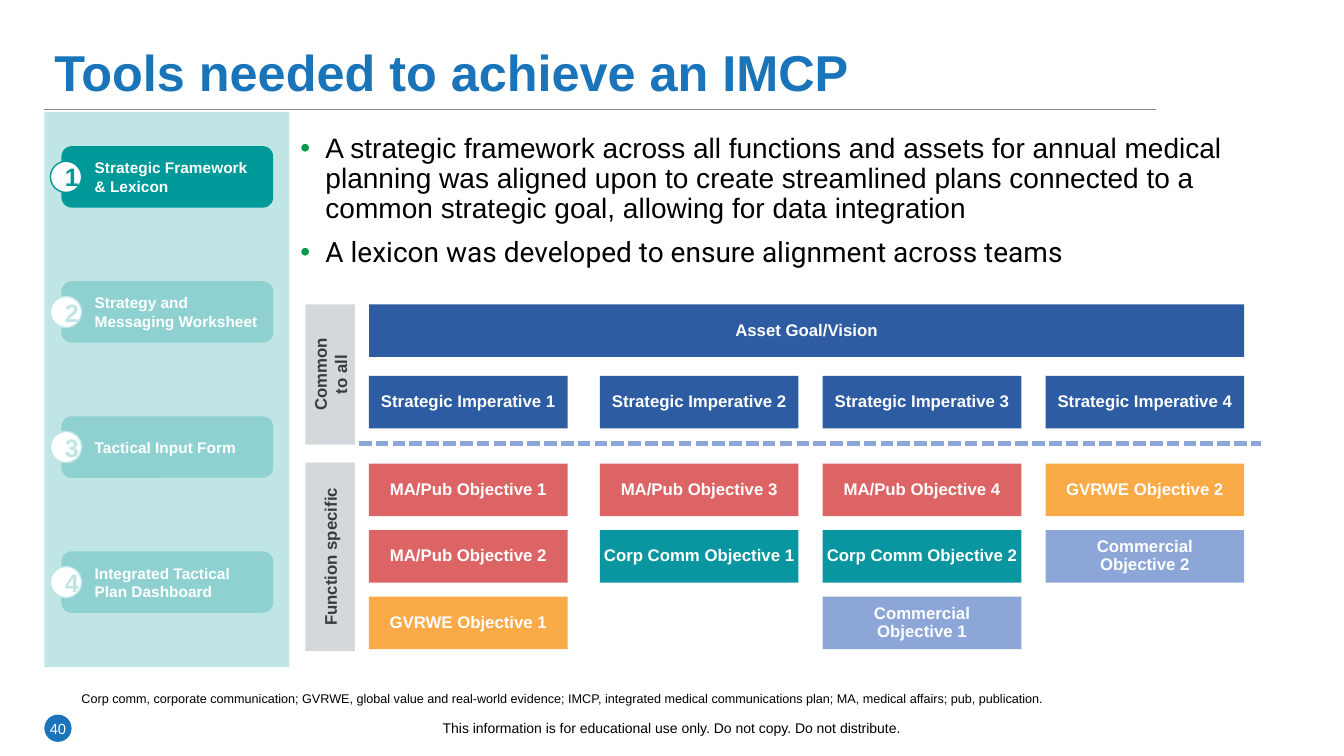
"""Build the slide on the tools needed to achieve an IMCP."""
from copy import deepcopy
from dataclasses import dataclass

from lxml import etree
from pptx import Presentation
from pptx.dml.color import RGBColor
from pptx.enum.dml import MSO_LINE
from pptx.enum.shapes import MSO_CONNECTOR, MSO_SHAPE
from pptx.enum.text import MSO_ANCHOR, PP_ALIGN
from pptx.oxml.ns import qn
from pptx.util import Inches, Pt

RECT, ROUND, OVAL = MSO_SHAPE.RECTANGLE, MSO_SHAPE.ROUNDED_RECTANGLE, MSO_SHAPE.OVAL
LEFT, CENTER = PP_ALIGN.LEFT, PP_ALIGN.CENTER
TOP, MIDDLE, BOTTOM = MSO_ANCHOR.TOP, MSO_ANCHOR.MIDDLE, MSO_ANCHOR.BOTTOM
STRAIGHT, DASH = MSO_CONNECTOR.STRAIGHT, MSO_LINE.SQUARE_DOT

TITLE = "Tools needed to achieve an IMCP"
BULLETS = [
    ("A strategic framework across all functions and assets for annual medical planning was "
     "aligned upon to create streamlined plans connected to a common strategic goal, allowing "
     "for data integration", "Arial"),
    ("A lexicon was developed to ensure alignment across teams", "Roboto"),
]
STEPS = ["Strategic Framework\v& Lexicon", "Strategy and Messaging Worksheet",
         "Tactical Input Form", "Integrated Tactical Plan Dashboard"]
ACTIVE_STEP = 1
GOAL = "Asset Goal/Vision"
BOARD = [
    [("Strategic Imperative 1", "common"), ("Strategic Imperative 2", "common"),
     ("Strategic Imperative 3", "common"), ("Strategic Imperative 4", "common")],
    [("MA/Pub Objective 1", "medical"), ("MA/Pub Objective 3", "medical"),
     ("MA/Pub Objective 4", "medical"), ("GVRWE Objective 2", "evidence")],
    [("MA/Pub Objective 2", "medical"), ("Corp Comm Objective 1", "corporate"),
     ("Corp Comm Objective 2", "corporate"), ("Commercial\vObjective 2", "commercial")],
    [("GVRWE Objective 1", "evidence"), None,
     ("Commercial\vObjective 1", "commercial"), None],
]
BANDS = [("Common\vto all", 3.02, 1.39), ("Function specific", 4.59, 1.87)]
ABBREVIATIONS = ("Corp comm, corporate communication; GVRWE, global value and real-world evidence; "
                 "IMCP, integrated medical communications plan; MA, medical affairs; "
                 "pub, publication.")
NOTICE = "This information is for educational use only. Do not copy. Do not distribute."
PAGE = "40"

MARGIN = 0.44
COLUMNS = [3.66, 5.95, 8.16, 10.37]
ROWS = [3.73, 4.6, 5.26, 5.92]
GOAL_TOP, BOX_W, BOX_H = 3.02, 1.97, 0.52
BAND_LEFT, BAND_W = 3.03, 0.49
STEP_TOP, STEP_PITCH, STEP_H, BADGE = 1.45, 1.34, 0.61, 0.31


@dataclass(frozen=True)
class Theme:
    font: str = "Arial"
    blue: str = "1A74BA"
    teal: str = "009999"
    pale: str = "BFE5E5"
    white: str = "FFFFFF"
    black: str = "000000"
    rule: str = "8A8A8A"
    bullet: str = "009A4D"
    band: str = "D5D8DB"
    band_text: str = "373C41"
    common: str = "2D5CA2"
    medical: str = "DC6464"
    corporate: str = "0A96A0"
    evidence: str = "FAAA46"
    commercial: str = "8CA6D7"
    title_pt: float = 36
    body_pt: float = 20
    badge_pt: float = 18
    box_pt: float = 12
    step_pt: float = 11
    page_pt: float = 10.5
    notice_pt: float = 10
    note_pt: float = 9


T = Theme()


def rgb(value):
    return RGBColor.from_string(value)


def write(p, text, size=T.box_pt, color=T.white, font=T.font, bold=False, align=LEFT, spacing=None):
    p.text = text
    p.alignment = align
    p.line_spacing = spacing
    for r in p.runs:
        r.font.name, r.font.size, r.font.bold = font, Pt(size), bold
        r.font.color.rgb = rgb(color)
    for br in p._p.findall(qn("a:br")):
        br.append(deepcopy(p.runs[0]._r.rPr))


def frame(sp, anchor=TOP, insets=(0.1, 0.05, 0.1, 0.05)):
    tf = sp.text_frame
    tf.word_wrap = True
    tf.vertical_anchor = anchor
    tf.margin_left, tf.margin_top, tf.margin_right, tf.margin_bottom = map(Inches, insets)
    return tf


def add_shape(slide, kind, box, fill, line=None, alpha=None):
    sp = slide.shapes.add_shape(kind, *map(Inches, box))
    sp.shadow.inherit = False
    sp.fill.solid()
    sp.fill.fore_color.rgb = rgb(fill)
    if alpha:
        color = sp._element.spPr.find(qn("a:solidFill"))[0]
        etree.SubElement(color, qn("a:alpha"), val=str(alpha * 1000))
    if line:
        sp.line.color.rgb = rgb(line)
        sp.line.width = Pt(1)
    else:
        sp.line.fill.background()
    return sp


def add_text(slide, box, text, anchor=TOP, **fmt):
    sp = slide.shapes.add_textbox(*map(Inches, box))
    write(frame(sp, anchor).paragraphs[0], text, color=T.black, **fmt)


def add_line(slide, left, right, y, color, width, dash=None):
    line = slide.shapes.add_connector(STRAIGHT, *map(Inches, (left, y, right, y)))
    line.line.color.rgb = rgb(color)
    line.line.width = Pt(width)
    if dash:
        line.line.dash_style = dash
    etree.SubElement(line._element.spPr, qn("a:effectLst"))


def add_title(slide):
    sp = slide.shapes.title
    sp.left, sp.top, sp.width, sp.height = map(Inches, (MARGIN, 0.21, 12.17, 1.07))
    write(frame(sp, MIDDLE).paragraphs[0], TITLE, size=T.title_pt, color=T.blue, bold=True,
          spacing=0.9)


def add_bullets(slide):
    sp = slide.shapes.add_textbox(*map(Inches, (2.88, 1.28, 10.17, 1.72)))
    tf = frame(sp)
    for i, (text, font) in enumerate(BULLETS):
        p = tf.add_paragraph() if i else tf.paragraphs[0]
        write(p, text, size=T.body_pt, color=T.black, font=font, spacing=0.9)
        if i:
            p.space_before = Pt(10)
        pPr = p._p.get_or_add_pPr()
        pPr.set("marL", str(Inches(0.25)))
        pPr.set("indent", str(-Inches(0.25)))
        color = etree.SubElement(pPr, qn("a:buClr"))
        etree.SubElement(color, qn("a:srgbClr"), val=T.bullet)
        etree.SubElement(pPr, qn("a:buFont"), typeface="Arial")
        etree.SubElement(pPr, qn("a:buChar"), char="•")


def add_steps(slide):
    add_shape(slide, RECT, (MARGIN, 1.11, 2.43, 5.51), T.teal, alpha=25)
    for i, text in enumerate(STEPS):
        active = i + 1 == ACTIVE_STEP
        top = STEP_TOP + i * STEP_PITCH
        card = add_shape(slide, ROUND, (0.61, top, 2.1, STEP_H), T.teal,
                         alpha=None if active else 25)
        write(frame(card, MIDDLE, (0.3, 0.05, 0.1, 0.05)).paragraphs[0], text,
              size=T.step_pt, bold=True)
        accent = T.teal if active else T.pale
        badge = add_shape(slide, OVAL, (0.5, top + (STEP_H - BADGE) / 2, BADGE, BADGE),
                          T.white, line=accent)
        write(frame(badge, MIDDLE).paragraphs[0], str(i + 1), size=T.badge_pt, color=accent,
              bold=True, align=CENTER)


def add_box(slide, left, top, width, text, fill):
    sp = add_shape(slide, RECT, (left, top, width, BOX_H), fill)
    write(frame(sp, MIDDLE, (0.01,) * 4).paragraphs[0], text, bold=True, align=CENTER, spacing=0.9)


def add_board(slide):
    right = COLUMNS[-1] + BOX_W
    add_box(slide, COLUMNS[0], GOAL_TOP, right - COLUMNS[0], GOAL, T.common)
    for top, cells in zip(ROWS, BOARD):
        for left, cell in zip(COLUMNS, cells):
            if cell:
                text, group = cell
                add_box(slide, left, top, BOX_W, text, getattr(T, group))
    add_line(slide, 3.56, 12.51, 4.4, T.commercial, 3, DASH)
    for text, top, length in BANDS:
        box = (BAND_LEFT + (BAND_W - length) / 2, top + (length - BAND_W) / 2, length, BAND_W)
        sp = add_shape(slide, RECT, box, T.band)
        sp.rotation = 270
        write(frame(sp, MIDDLE, (0.05,) * 4).paragraphs[0], text, color=T.band_text, bold=True,
              align=CENTER)


def add_footer(slide):
    add_text(slide, (0.71, 6.57, 11.92, 0.48), ABBREVIATIONS, anchor=BOTTOM, size=T.note_pt)
    add_text(slide, (0.38, 7.09, 12.56, 0.4), NOTICE, size=T.notice_pt, align=CENTER)
    sp = add_shape(slide, OVAL, (MARGIN, 7.09, 0.27, 0.27), T.blue)
    tf = frame(sp, MIDDLE, (0,) * 4)
    tf.word_wrap = False
    write(tf.paragraphs[0], PAGE, size=T.page_pt, align=CENTER)


def main():
    prs = Presentation()
    prs.slide_width, prs.slide_height = Inches(13.33), Inches(7.5)
    slide = prs.slides.add_slide(prs.slide_layouts[5])
    add_title(slide)
    add_line(slide, MARGIN, 11.47, 1.09, T.rule, 0.5)
    add_bullets(slide)
    add_steps(slide)
    add_board(slide)
    add_footer(slide)
    prs.save("out.pptx")


if __name__ == "__main__":
    main()
